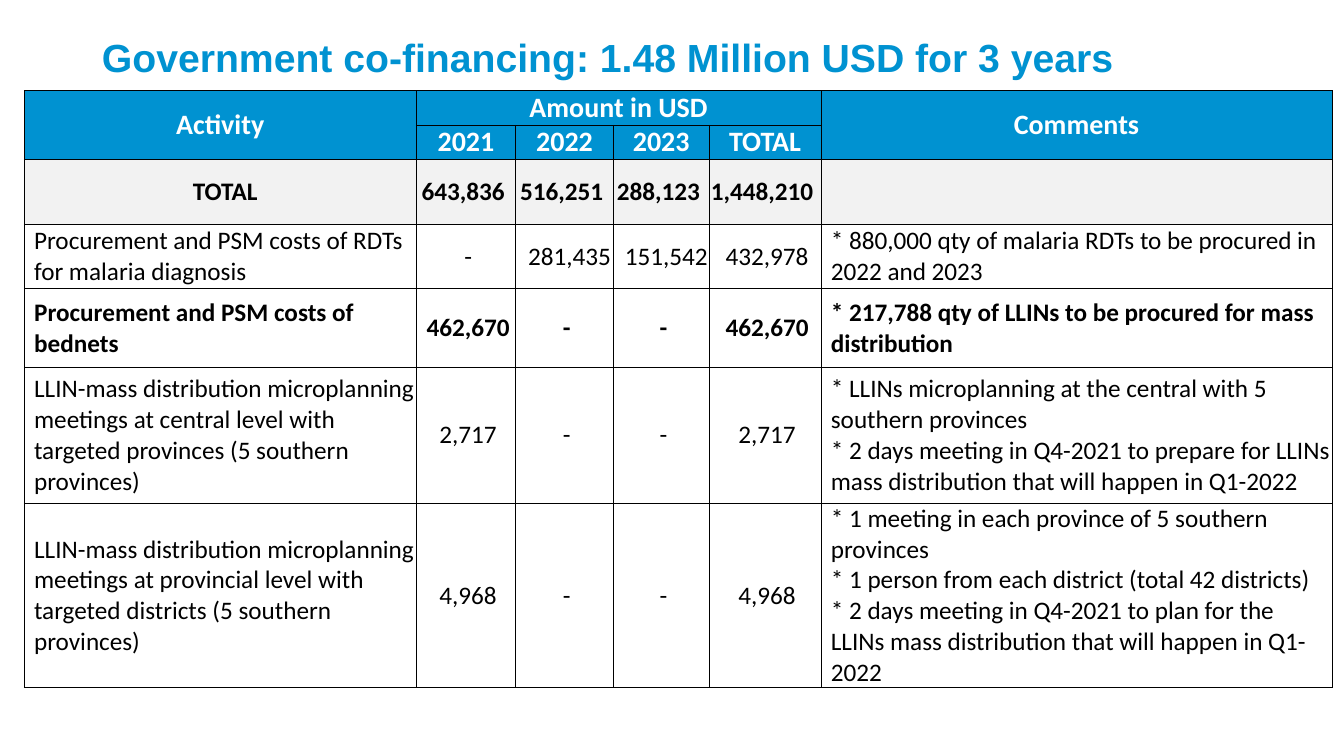
from pptx import Presentation
from pptx.dml.color import RGBColor
from pptx.enum.text import MSO_ANCHOR, MSO_AUTO_SIZE, PP_ALIGN
from pptx.oxml import parse_xml
from pptx.oxml.ns import nsdecls
from pptx.util import Cm, Pt

BLUE, WHITE, BLACK, GREY = "0092D1", "FFFFFF", "000000", "F2F2F2"

COLUMN_WIDTHS = [9.88, 2.51, 2.46, 2.41, 2.82, 12.88]
ROW_HEIGHTS = [0.86, 0.86, 1.63, 1.63, 1.98, 3.42, 4.34]
COMMENTS_COLUMN = 5
BEDNETS_ROW = 4

# Header cells: row, column, last row, last column, text
HEADERS = [
    (0, 0, 1, 0, "Activity"),
    (0, 1, 0, 4, "Amount in USD"),
    (0, 5, 1, 5, "Comments"),
] + [(1, column, 1, column, text)
     for column, text in enumerate(["2021", "2022", "2023", "TOTAL"], start=1)]

TOTALS = ["TOTAL", "643,836 ", "516,251 ", "288,123 ", "1,448,210 ", ""]

ACTIVITIES = [
    ["Procurement and PSM costs of RDTs for malaria diagnosis",
     "- ", "281,435 ", "151,542 ", "432,978 ",
     "* 880,000 qty of malaria RDTs to be procured in 2022 and 2023"],
    ["Procurement and PSM costs of bednets",
     "462,670 ", "- ", "- ", "462,670 ",
     "* 217,788 qty of LLINs to be procured for mass distribution"],
    ["LLIN-mass distribution microplanning meetings at central level with "
     "targeted provinces (5 southern provinces)",
     "2,717 ", "- ", "- ", "2,717 ",
     "* LLINs microplanning at the central with 5 southern provinces\n"
     "* 2 days meeting in Q4-2021 to prepare for LLINs mass distribution "
     "that will happen in Q1-2022"],
    ["LLIN-mass distribution microplanning meetings at provincial level with "
     "targeted districts (5 southern provinces)",
     "4,968 ", "- ", "- ", "4,968 ",
     "* 1 meeting in each province of 5 southern provinces\n"
     "* 1 person from each district (total 42 districts)\n"
     "* 2 days meeting in Q4-2021 to plan for the LLINs mass distribution "
     "that will happen in Q1-2022"],
]


def color(value):
    return RGBColor.from_string(value)


class SlideBuilder:
    title_font = "Arial"
    body_font = "Calibri"
    indent = Cm(0.25)

    def __init__(self, presentation):
        self.slide = presentation.slides.add_slide(presentation.slide_layouts[5])

    def set_text(self, text_frame, text, font_name, size, font_color, bold,
                 alignment, indent=0):
        paragraph = text_frame.paragraphs[0]
        paragraph.text = text
        paragraph.alignment = alignment
        if indent:
            properties = paragraph._p.get_or_add_pPr()
            properties.set("marL", str(indent))
            properties.set("indent", "0")
        for run in paragraph.runs:
            run.font.name = font_name
            run.font.size = Pt(size)
            run.font.bold = bold
            run.font.color.rgb = color(font_color)

    def add_title(self, text, left, top, width, height):
        title = self.slide.shapes.title
        title.left, title.top = Cm(left), Cm(top)
        title.width, title.height = Cm(width), Cm(height)
        frame = title.text_frame
        frame.margin_left = frame.margin_right = 0
        frame.margin_top = frame.margin_bottom = 0
        frame.vertical_anchor = MSO_ANCHOR.MIDDLE
        frame.auto_size = MSO_AUTO_SIZE.NONE
        frame.word_wrap = True
        self.set_text(frame, text, self.title_font, 28, BLUE, True, PP_ALIGN.LEFT)

    def add_table(self, left, top, widths, heights):
        table = self.slide.shapes.add_table(
            len(heights), len(widths), Cm(left), Cm(top),
            Cm(sum(widths)), Cm(sum(heights))).table
        table.first_row = table.horz_banding = False
        for column, width in zip(table.columns, widths):
            column.width = Cm(width)
        for row, height in zip(table.rows, heights):
            row.height = Cm(height)
        for cell in table.iter_cells():
            self.format_cell(cell)
        return table

    def format_cell(self, cell):
        cell.margin_left = cell.margin_right = 0
        cell.margin_top = cell.margin_bottom = 0
        cell.vertical_anchor = MSO_ANCHOR.MIDDLE
        properties = cell._tc.get_or_add_tcPr()
        for side in ("lnL", "lnR", "lnT", "lnB"):
            properties.append(parse_xml(
                f'<a:{side} {nsdecls("a")} w="{Pt(0.75)}"><a:solidFill>'
                f'<a:srgbClr val="{BLACK}"/></a:solidFill></a:{side}>'))
        cell.fill.background()

    def fill_cell(self, cell, text, size=18, font_color=BLACK, fill=None,
                  bold=True, alignment=PP_ALIGN.CENTER, indent=0):
        if fill:
            cell.fill.solid()
            cell.fill.fore_color.rgb = color(fill)
        self.set_text(cell.text_frame, text, self.body_font, size, font_color,
                      bold, alignment, indent)


def main():
    presentation = Presentation()
    presentation.slide_width, presentation.slide_height = Cm(33.87), Cm(19.05)
    builder = SlideBuilder(presentation)

    # Title
    builder.add_title("Government co-financing: 1.48 Million USD for 3 years",
                      2.57, 0.33, 28.52, 2.21)

    # Table header
    table = builder.add_table(0.61, 2.29, COLUMN_WIDTHS, ROW_HEIGHTS)
    for row, column, last_row, last_column, text in HEADERS:
        cell = table.cell(row, column)
        if (row, column) != (last_row, last_column):
            cell.merge(table.cell(last_row, last_column))
        builder.fill_cell(cell, text, size=20, font_color=WHITE, fill=BLUE)

    # Totals
    for column, text in enumerate(TOTALS):
        builder.fill_cell(table.cell(2, column), text, fill=GREY,
                          indent=0 if column else builder.indent)

    # Activities
    for row, values in enumerate(ACTIVITIES, start=3):
        for column, text in enumerate(values):
            is_wording = column in (0, COMMENTS_COLUMN)
            builder.fill_cell(
                table.cell(row, column), text, bold=row == BEDNETS_ROW,
                alignment=PP_ALIGN.LEFT if is_wording else PP_ALIGN.CENTER,
                indent=builder.indent)

    presentation.save("out.pptx")


if __name__ == "__main__":
    main()
